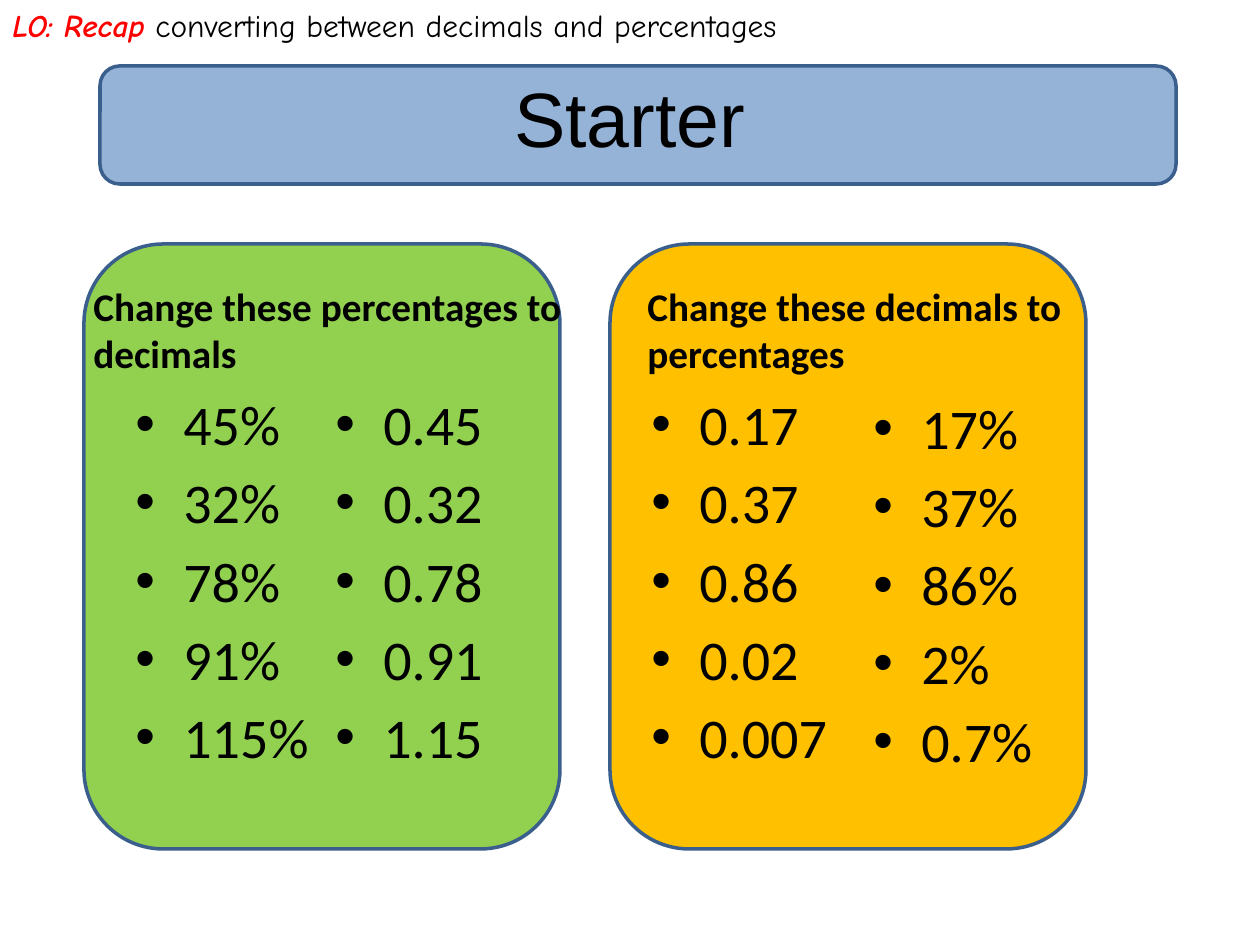
from lxml import etree
from pptx import Presentation
from pptx import util as u
from pptx.dml.color import RGBColor
from pptx.enum import shapes, text
from pptx.oxml.ns import qn

PX = 914400 / 126
BLACK = RGBColor(0, 0, 0)
RED = RGBColor(0xFF, 0, 0)
GREEN = RGBColor(0x92, 0xD0, 0x50)
ORANGE = RGBColor(0xFF, 0xC0, 0x00)
BLUE = RGBColor(0x95, 0xB3, 0xD7)
OUTLINE = RGBColor(0x3A, 0x5F, 0x8C)


def emu(*lengths):
    return [u.Emu(round(n * PX)) for n in lengths]


def add_card(s, box, fill):
    sp = s.shapes.add_shape(shapes.MSO_SHAPE.ROUNDED_RECTANGLE, *emu(*box))
    sp.shadow.inherit = False
    sp.fill.solid()
    sp.fill.fore_color.rgb = fill
    sp.line.color.rgb = OUTLINE
    sp.line.width = u.Pt(2)


def add_run(p, words, size, font="Calibri", color=BLACK, bold=False, italic=False):
    r = p.add_run()
    r.text = words
    r.font.size = u.Pt(size)
    r.font.name = font
    r.font.color.rgb = color
    r.font.bold = bold
    r.font.italic = italic


def format_paragraph(p, bullet):
    pPr = p._p.get_or_add_pPr()
    before = etree.SubElement(pPr, qn("a:spcBef"))
    etree.SubElement(before, qn("a:spcPct")).set("val", "20000")
    if bullet:
        indent = emu(48)[0]
        pPr.set("marL", str(indent))
        pPr.set("indent", str(-indent))
        etree.SubElement(pPr, qn("a:buFont")).set("typeface", "Arial")
        etree.SubElement(pPr, qn("a:buChar")).set("char", "•")


def add_text(s, box, lines, align=None, anchor=text.MSO_ANCHOR.TOP,
             spaced=False, bullet=False, **font):
    tf = s.shapes.add_textbox(*emu(*box)).text_frame
    tf.word_wrap = True
    tf.vertical_anchor = anchor
    for i, line in enumerate(lines):
        p = tf.paragraphs[0] if i == 0 else tf.add_paragraph()
        p.alignment = align
        if spaced:
            format_paragraph(p, bullet)
        add_run(p, line, **font)
    return tf


def add_objective(s, box):
    tf = add_text(s, box, ["LO: Recap"], size=18, font="Comic Neue",
                  color=RED, bold=True, italic=True)
    add_run(tf.paragraphs[0], " converting between decimals and percentages",
            18, "Comic Neue")


def add_banner(s, box, title):
    x, y, w, h = box
    add_card(s, box, BLUE)
    add_text(s, (x - 37, y - 28, w + 58, h + 40), [title], size=44, font="Arial",
             align=text.PP_ALIGN.CENTER, anchor=text.MSO_ANCHOR.MIDDLE)


def add_panel(s, box, fill, heading, heading_dx, columns):
    x, y, w, h = box
    add_card(s, box, fill)
    add_text(s, (x + heading_dx, y + 32, 557, 88), [heading],
             spaced=True, size=22.4, bold=True)
    for dx, dy, values in columns:
        add_text(s, (x + dx, y + dy, 225, 544), values.split(),
                 spaced=True, bullet=True, size=32)


def main():
    prs = Presentation()
    prs.slide_width, prs.slide_height = emu(1260, 945)
    s = prs.slides.add_slide(prs.slide_layouts[6])
    add_banner(s, (100, 66, 1076, 118), "Starter")
    add_panel(s, (84, 244, 476, 605), GREEN,
              "Change these percentages to decimals", -3,
              [(39, 139, "45% 32% 78% 91% 115%"),
               (239, 139, "0.45 0.32 0.78 0.91 1.15")])
    add_panel(s, (610, 244, 476, 605), ORANGE,
              "Change these decimals to percentages", 25,
              [(29, 139, "0.17 0.37 0.86 0.02 0.007"),
               (251, 143, "17% 37% 86% 2% 0.7%")])
    add_objective(s, (0, 0, 1017, 89))
    prs.save("out.pptx")


if __name__ == "__main__":
    main()
